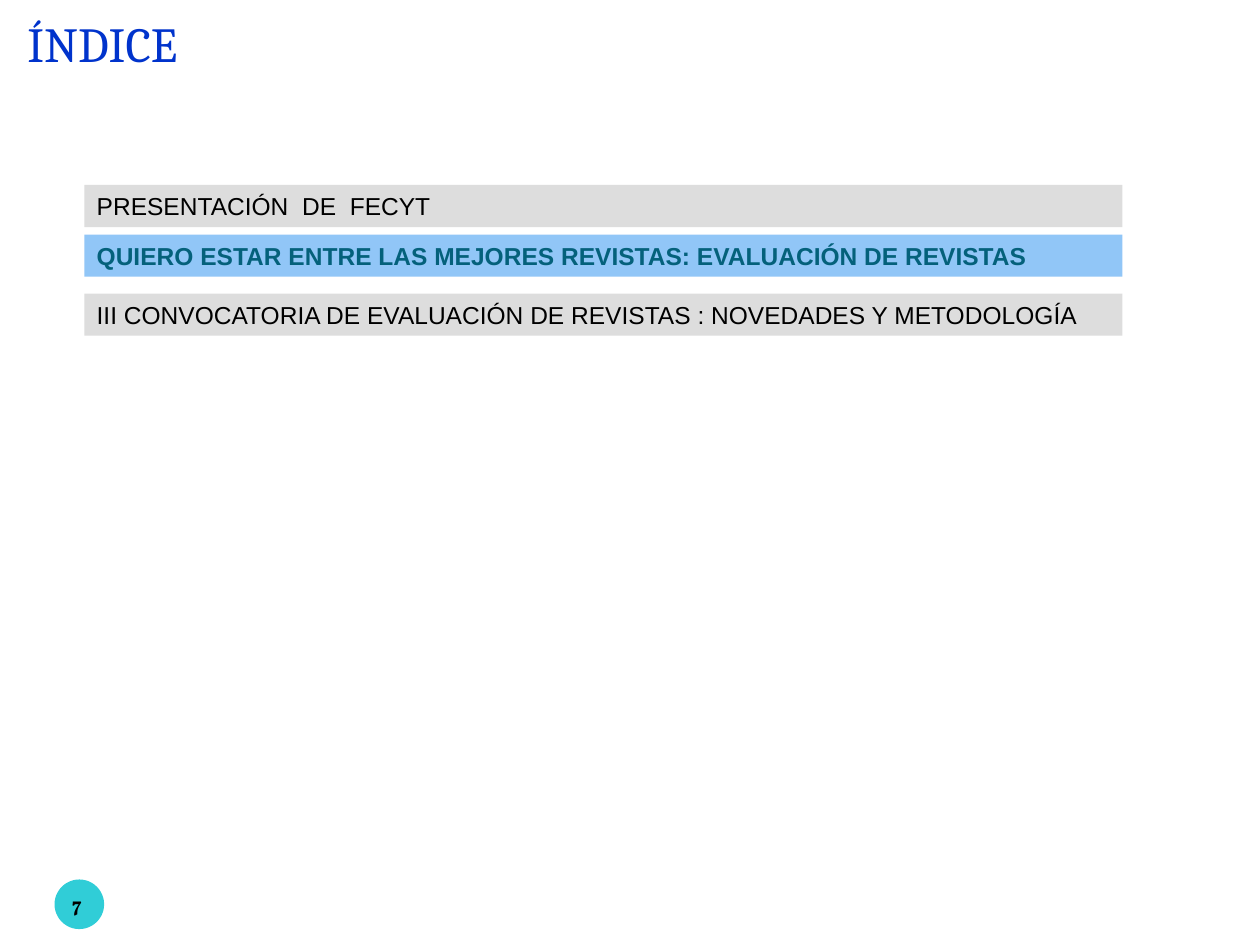
import pptx
import pptx.dml.color
import pptx.enum.shapes
import pptx.enum.text
import pptx.util

Cm = pptx.util.Cm
SHAPES = pptx.enum.shapes.MSO_SHAPE
ALIGN = pptx.enum.text.PP_ALIGN
MIDDLE = pptx.enum.text.MSO_ANCHOR.MIDDLE


def rgb(hex_colour):
    return pptx.dml.color.RGBColor.from_string(hex_colour)


def write(shape, text, font_name, size, colour, bold=False, align=ALIGN.LEFT):
    """Put one formatted paragraph, vertically centred, into the shape."""
    frame = shape.text_frame
    frame.word_wrap = True
    frame.vertical_anchor = MIDDLE
    frame.text = text
    paragraph = frame.paragraphs[0]
    paragraph.alignment = align
    paragraph.font.name = font_name
    paragraph.font.size = pptx.util.Pt(size)
    paragraph.font.bold = bold
    paragraph.font.color.rgb = rgb(colour)


deck = pptx.Presentation()
deck.slide_width, deck.slide_height = Cm(25.4), Cm(19.05)
slide = deck.slides.add_slide(deck.slide_layouts[5])

# Heading
heading = slide.shapes.title
heading.left, heading.top = Cm(0.3), Cm(0.13)
heading.width, heading.height = Cm(24), Cm(1.45)
write(heading, "ÍNDICE", "Cambria", 28, "0033CC")

# Index entries, the current section highlighted
entries = [
    (3.73, "PRESENTACIÓN  DE  FECYT", False),
    (4.73, "QUIERO ESTAR ENTRE LAS MEJORES REVISTAS: EVALUACIÓN DE REVISTAS", True),
    (5.92, "III CONVOCATORIA DE EVALUACIÓN DE REVISTAS : NOVEDADES Y METODOLOGÍA", False),
]
for top, text, current in entries:
    entry = slide.shapes.add_shape(
        SHAPES.RECTANGLE, Cm(1.7), Cm(top), Cm(20.93), Cm(0.85))
    entry.shadow.inherit = False
    entry.fill.solid()
    entry.fill.fore_color.rgb = rgb("91C6F7" if current else "DDDDDD")
    entry.line.fill.background()
    write(entry, text, "Arial", 14, "04617B" if current else "000000", current)

# Page number
badge = slide.shapes.add_shape(
    SHAPES.OVAL, Cm(1.1), Cm(17.73), Cm(1), Cm(1))
badge.shadow.inherit = False
badge.fill.solid()
badge.fill.fore_color.rgb = rgb("30CDD7")
badge.line.fill.background()

page_number = slide.shapes.add_textbox(Cm(1.05), Cm(17.98), Cm(1), Cm(0.51))
page_frame = page_number.text_frame
page_frame.margin_left = page_frame.margin_right = 0
page_frame.margin_top = page_frame.margin_bottom = 0
write(page_number, "7", "Vollkorn", 12, "000000", True, ALIGN.CENTER)

deck.save("out.pptx")
